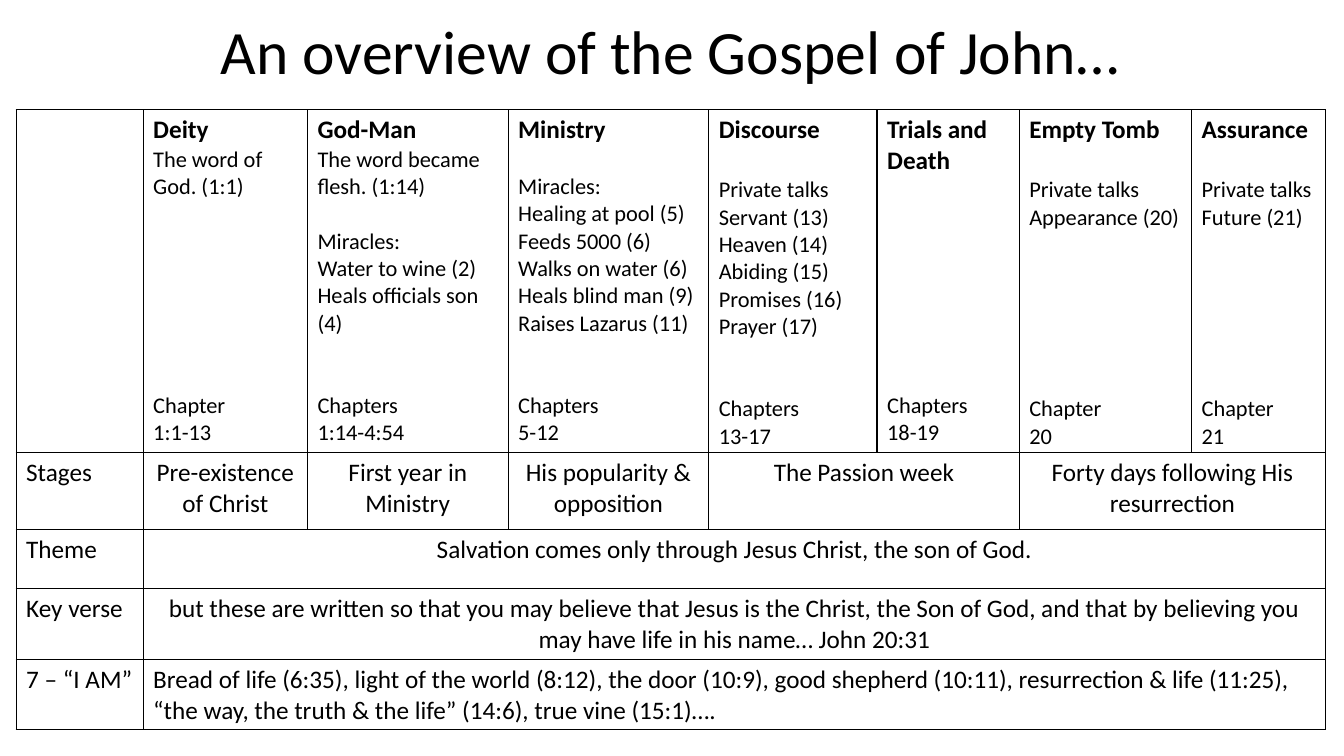
"""Build a one-slide overview table of the Gospel of John."""
from dataclasses import dataclass

from lxml import etree
from pptx import Presentation
from pptx.dml.color import RGBColor
from pptx.enum.text import MSO_ANCHOR, PP_ALIGN
from pptx.oxml.ns import qn
from pptx.util import Pt

LEFT, CENTER = PP_ALIGN.LEFT, PP_ALIGN.CENTER
MIDDLE = MSO_ANCHOR.MIDDLE
EMU_PER_PX = 9144
FONT, BLACK = "Calibri", "000000"
COLUMNS = [126, 163, 199, 199, 167, 141, 171, 133]
ROWS = [323, 76, 59, 59, 59]


@dataclass(frozen=True)
class Era:
    """One column of the top row; gaps are points of space above a block."""

    heading: str
    summary: tuple[str, ...]
    gap: float
    events: tuple[str, ...]
    chapter_gap: float
    chapters: tuple[str, str]


@dataclass(frozen=True)
class Entry:
    """One cell below the top row, covering one or more columns."""

    row: int
    col: int
    text: str
    span: int = 1
    align: PP_ALIGN = CENTER


ERAS = [
    Era("Deity", ("The word of God. (1:1)",), 0, (), 136.7, ("Chapter", "1:1-13")),
    Era("God-Man", ("The word became flesh. (1:14)",), 19.5,
        ("Miracles:", "Water to wine (2)", "Heals officials son (4)"),
        39, ("Chapters", "1:14-4:54")),
    Era("Ministry", (), 19.5,
        ("Miracles:", "Healing at pool (5)", "Feeds 5000 (6)", "Walks on water (6)",
         "Heals blind man (9)", "Raises Lazarus (11)"), 39, ("Chapters", "5-12")),
    Era("Discourse", (), 22,
        ("Private talks", "Servant (13)", "Heaven (14)", "Abiding (15)",
         "Promises (16)", "Prayer (17)"), 39, ("Chapters", "13-17")),
    Era("Trials and Death", (), 0, (), 153.8, ("Chapters", "18-19")),
    Era("Empty Tomb", (), 22, ("Private talks", "Appearance (20)"),
        117.2, ("Chapter", "20")),
    Era("Assurance", (), 22, ("Private talks", "Future (21)"),
        117.2, ("Chapter", "21")),
]

ENTRIES = [
    Entry(1, 0, "Stages", align=LEFT),
    Entry(1, 1, "Pre-existence of Christ"),
    Entry(1, 2, "First year in Ministry"),
    Entry(1, 3, "His popularity & opposition"),
    Entry(1, 4, "The Passion week", 2),
    Entry(1, 6, "Forty days following His resurrection", 2),
    Entry(2, 0, "Theme", align=LEFT),
    Entry(2, 1, "Salvation comes only through Jesus Christ, the son of God.", 7),
    Entry(3, 0, "Key verse", align=LEFT),
    Entry(3, 1, "but these are written so that you may believe that Jesus is the Christ, "
          "the Son of God, and that by believing you may have life in his name… "
          "John 20:31", 7),
    Entry(4, 0, "7 – “I AM”", align=LEFT),
    Entry(4, 1, "Bread of life (6:35), light of the world (8:12), the door (10:9), "
          "good shepherd (10:11), resurrection & life (11:25), “the way, the truth "
          "& the life” (14:6), true vine (15:1)….", 7, LEFT),
]


def px(n: int) -> int:
    """Turn px into EMU."""
    return n * EMU_PER_PX


def rgb(color: str) -> RGBColor:
    """Turn a hex string into a colour."""
    return RGBColor.from_string(color)


def write(tf, text: str, *, size: int = 18, bold: bool = False, color: str = BLACK,
          align: PP_ALIGN = LEFT, before: float = 0, spacing: float = 1.0) -> None:
    """Add a formatted paragraph, filling the first one if it is empty."""
    p = tf.paragraphs[0] if not tf.text else tf.add_paragraph()
    p.alignment, p.space_before, p.line_spacing = align, Pt(before), spacing
    r = p.add_run()
    r.text = text
    r.font.name, r.font.size, r.font.bold = FONT, Pt(size), bold
    r.font.color.rgb = rgb(color)


def frame_cell(cell, color: str = BLACK, width: int = 1) -> None:
    """Clear the fill of a cell and draw its four borders."""
    cell.fill.background()
    tc_pr = cell._tc.get_or_add_tcPr()
    for i, side in enumerate(("a:lnL", "a:lnR", "a:lnT", "a:lnB")):
        ln = etree.Element(qn(side), w=str(Pt(width)))
        fill = etree.SubElement(ln, qn("a:solidFill"))
        etree.SubElement(fill, qn("a:srgbClr"), val=color)
        tc_pr.insert(i, ln)


def write_era(tf, era: Era) -> None:
    """Write the heading, body and chapters of an era."""
    write(tf, era.heading, bold=True)
    blocks = ((0, era.summary), (era.gap, era.events), (era.chapter_gap, era.chapters))
    for gap, lines in blocks:
        for i, line in enumerate(lines):
            write(tf, line, size=16, before=0 if i else gap)


def add_title(slide) -> None:
    """Add the centred title."""
    tf = slide.shapes.add_textbox(px(16), px(16), px(1298), px(77)).text_frame
    tf.word_wrap, tf.vertical_anchor = True, MIDDLE
    write(tf, "An overview of the Gospel of John…", size=44, align=CENTER, spacing=0.9)


def add_overview(slide) -> None:
    """Add the overview table."""
    table = slide.shapes.add_table(len(ROWS), len(COLUMNS), px(16), px(109),
                                   px(sum(COLUMNS)), px(sum(ROWS))).table
    table.first_row = table.horz_banding = False
    for column, width in zip(table.columns, COLUMNS):
        column.width = px(width)
    for row, height in zip(table.rows, ROWS):
        row.height = px(height)
    for cell in table.iter_cells():
        frame_cell(cell)
    for col, era in enumerate(ERAS, start=1):
        write_era(table.cell(0, col).text_frame, era)
    for e in ENTRIES:
        cell = table.cell(e.row, e.col)
        if e.span > 1:
            cell.merge(table.cell(e.row, e.col + e.span - 1))
        write(cell.text_frame, e.text, align=e.align)


def main() -> None:
    """Build and save the slide."""
    prs = Presentation()
    prs.slide_width, prs.slide_height = px(1333), px(750)
    slide = prs.slides.add_slide(prs.slide_layouts[6])
    add_title(slide)
    add_overview(slide)
    prs.save("out.pptx")


if __name__ == "__main__":
    main()
